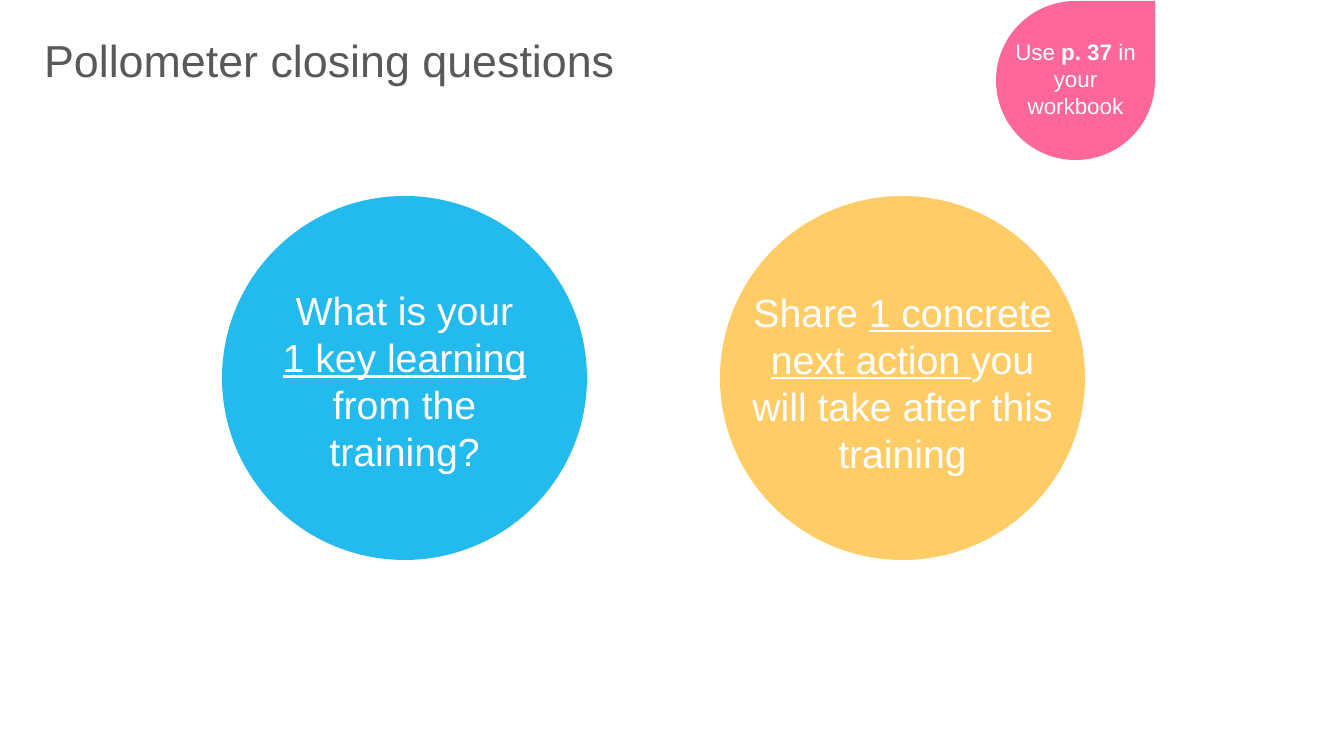
import pptx
import pptx.dml.color
import pptx.enum.shapes
import pptx.enum.text
import pptx.util

RGBColor = pptx.dml.color.RGBColor
WHITE = RGBColor(0xFF, 0xFF, 0xFF)
GREY = RGBColor(0x59, 0x59, 0x59)
BLUE = RGBColor(0x23, 0xBA, 0xED)
YELLOW = RGBColor(0xFF, 0xCC, 0x66)
PINK = RGBColor(0xFF, 0x66, 0x99)

FONT = "Arial"
EMU_PER_PX = 914400 / 100.8
OVAL = pptx.enum.shapes.MSO_SHAPE.OVAL
TEARDROP = pptx.enum.shapes.MSO_SHAPE.TEAR
ALIGN = pptx.enum.text.PP_ALIGN
ANCHOR = pptx.enum.text.MSO_ANCHOR


def px(*lengths):
    return [pptx.util.Emu(round(length * EMU_PER_PX)) for length in lengths]


def add_span(para, text, size, color, style=""):
    """Add one run; style is "", "bold" or "underline"."""
    span = para.add_run()
    span.text = text
    span.font.name = FONT
    span.font.size = pptx.util.Pt(size)
    span.font.color.rgb = color
    if style:
        setattr(span.font, style, True)


def add_title(page, text):
    title = page.shapes.title
    title.left, title.top, title.width, title.height = px(34, 14, 1267, 97)
    frame = title.text_frame
    frame.vertical_anchor = ANCHOR.MIDDLE
    para = frame.paragraphs[0]
    para.alignment = ALIGN.LEFT
    para.line_spacing = 0.9
    add_span(para, text, 32, GREY)


def add_bubble(page, kind, bounds, color):
    bubble = page.shapes.add_shape(kind, *px(*bounds))
    bubble.shadow.inherit = False
    bubble.fill.solid()
    bubble.fill.fore_color.rgb = color
    bubble.line.fill.background()


def add_caption(page, bounds, size, lines):
    """Add centred white text; each line is a list of (text, style) spans."""
    box = page.shapes.add_textbox(*px(*bounds))
    frame = box.text_frame
    frame.word_wrap = True
    frame.auto_size = pptx.enum.text.MSO_AUTO_SIZE.SHAPE_TO_FIT_TEXT
    for index, spans in enumerate(lines):
        para = frame.add_paragraph() if index else frame.paragraphs[0]
        para.alignment = ALIGN.CENTER
        for text, style in spans:
            add_span(para, text, size, WHITE, style)


def main():
    deck = pptx.Presentation()
    deck.slide_width, deck.slide_height = px(1344, 756)
    page = deck.slides.add_slide(deck.slide_layouts[5])

    add_title(page, "Pollometer closing questions")

    add_bubble(page, OVAL, (222, 196, 365, 364), BLUE)
    add_caption(page, (259, 281, 291, 231), 28, [
        [("What is your", "")],
        [("1 key learning ", "underline"), ("from the training?", "")],
    ])

    add_bubble(page, OVAL, (720, 196, 365, 364), YELLOW)
    add_caption(page, (729, 283, 347, 231), 28, [
        [("Share ", ""), ("1 concrete next action ", "underline"),
         ("you will take after this training", "")],
    ])

    add_bubble(page, TEARDROP, (996, 1, 159, 159), PINK)
    add_caption(page, (1001, 33, 149, 92), 16, [
        [("Use ", ""), ("p. 37 ", "bold"), ("in your workbook", "")],
    ])

    deck.save("out.pptx")


if __name__ == "__main__":
    main()
